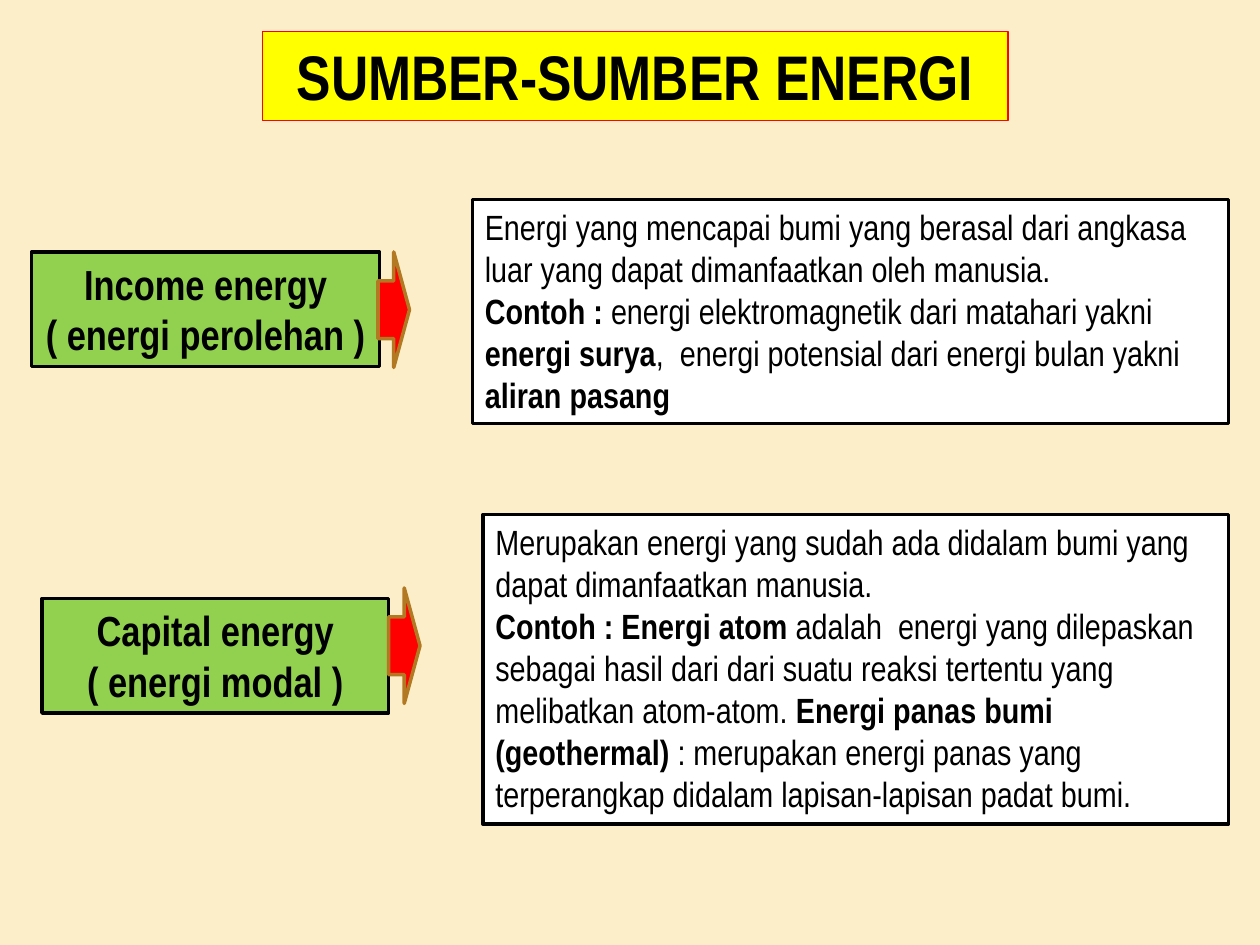
from pptx import Presentation
from pptx.dml.color import RGBColor
from pptx.enum.shapes import MSO_SHAPE
from pptx.enum.text import MSO_ANCHOR, MSO_AUTO_SIZE, PP_ALIGN
from pptx.util import Pt

RECT, ARROW = MSO_SHAPE.RECTANGLE, MSO_SHAPE.RIGHT_ARROW
LEFT, CENTER = PP_ALIGN.LEFT, PP_ALIGN.CENTER
TOP, NO_AUTOFIT = MSO_ANCHOR.TOP, MSO_AUTO_SIZE.NONE
FONT = "Arial Narrow"
COLORS = {
    "background": "FBEEC9", "title": "FFFF00", "label": "92D050",
    "panel": "FFFFFF", "arrow": "FF0000", "arrow_line": "B27822",
    "black": "000000",
}


def paint(sp, fill, line, width):
    sp.fill.solid()
    sp.fill.fore_color.rgb = RGBColor.from_string(COLORS[fill])
    sp.line.color.rgb = RGBColor.from_string(COLORS[line])
    sp.line.width = Pt(width)
    sp.shadow.inherit = False


def write(sp, paragraphs, size, align):
    """Fill a shape with paragraphs, each a list of (text, bold) runs."""
    tf = sp.text_frame
    tf.word_wrap = True
    tf.auto_size = NO_AUTOFIT
    tf.vertical_anchor = TOP
    for i, runs in enumerate(paragraphs):
        p = tf.add_paragraph() if i else tf.paragraphs[0]
        p.alignment = align
        for text, bold in runs:
            r = p.add_run()
            r.text = text
            r.font.name = FONT
            r.font.size = Pt(size)
            r.font.bold = bold
            r.font.color.rgb = RGBColor.from_string(COLORS["black"])


prs = Presentation()
prs.slide_width, prs.slide_height = Pt(720), Pt(540)
slide = prs.slides.add_slide(prs.slide_layouts[5])
slide.background.fill.solid()
slide.background.fill.fore_color.rgb = RGBColor.from_string(COLORS["background"])

title = slide.shapes.title
title.left, title.top, title.width, title.height = Pt(150), Pt(18), Pt(426), Pt(51)
paint(title, "title", "arrow", 0.75)
write(title, [[("SUMBER-SUMBER ENERGI", True)]], 36, CENTER)

# Each source: label box, description panel and arrow, as left, top, width, height
sources = [
    {
        "label_box": (18, 144, 199, 65.5),
        "label": ["Income energy", "( energi perolehan )"],
        "panel_box": (270, 114, 432, 128),
        "panel": [
            [("Energi yang mencapai bumi yang berasal dari angkasa luar "
              "yang dapat dimanfaatkan oleh manusia.", False)],
            [("Contoh : ", True),
             ("energi elektromagnetik dari matahari yakni ", False),
             ("energi surya", True),
             (",  energi potensial dari energi bulan yakni ", False),
             ("aliran pasang", True)],
        ],
        "arrow_box": (216, 144, 18, 66),
    },
    {
        "label_box": (24, 342, 198, 65.5),
        "label": ["Capital energy", "( energi modal )"],
        "panel_box": (276, 294, 426, 177),
        "panel": [
            [("Merupakan energi yang sudah ada didalam bumi yang "
              "dapat dimanfaatkan manusia.", False)],
            [("Contoh : Energi atom ", True),
             ("adalah  energi yang dilepaskan sebagai hasil dari dari suatu "
              "reaksi tertentu yang melibatkan atom-atom. ", False),
             ("Energi panas bumi (geothermal)", True),
             (" : merupakan energi panas yang terperangkap didalam "
              "lapisan-lapisan padat bumi.", False)],
        ],
        "arrow_box": (222, 336, 18, 66),
    },
]

for source in sources:
    label = slide.shapes.add_shape(RECT, *map(Pt, source["label_box"]))
    paint(label, "label", "black", 2)
    write(label, [[(line, True)] for line in source["label"]], 24, CENTER)
    label.text_frame.word_wrap = False

    panel = slide.shapes.add_shape(RECT, *map(Pt, source["panel_box"]))
    paint(panel, "panel", "black", 2)
    write(panel, source["panel"], 20, LEFT)

    arrow = slide.shapes.add_shape(ARROW, *map(Pt, source["arrow_box"]))
    paint(arrow, "arrow", "arrow_line", 2)

prs.save("out.pptx")
